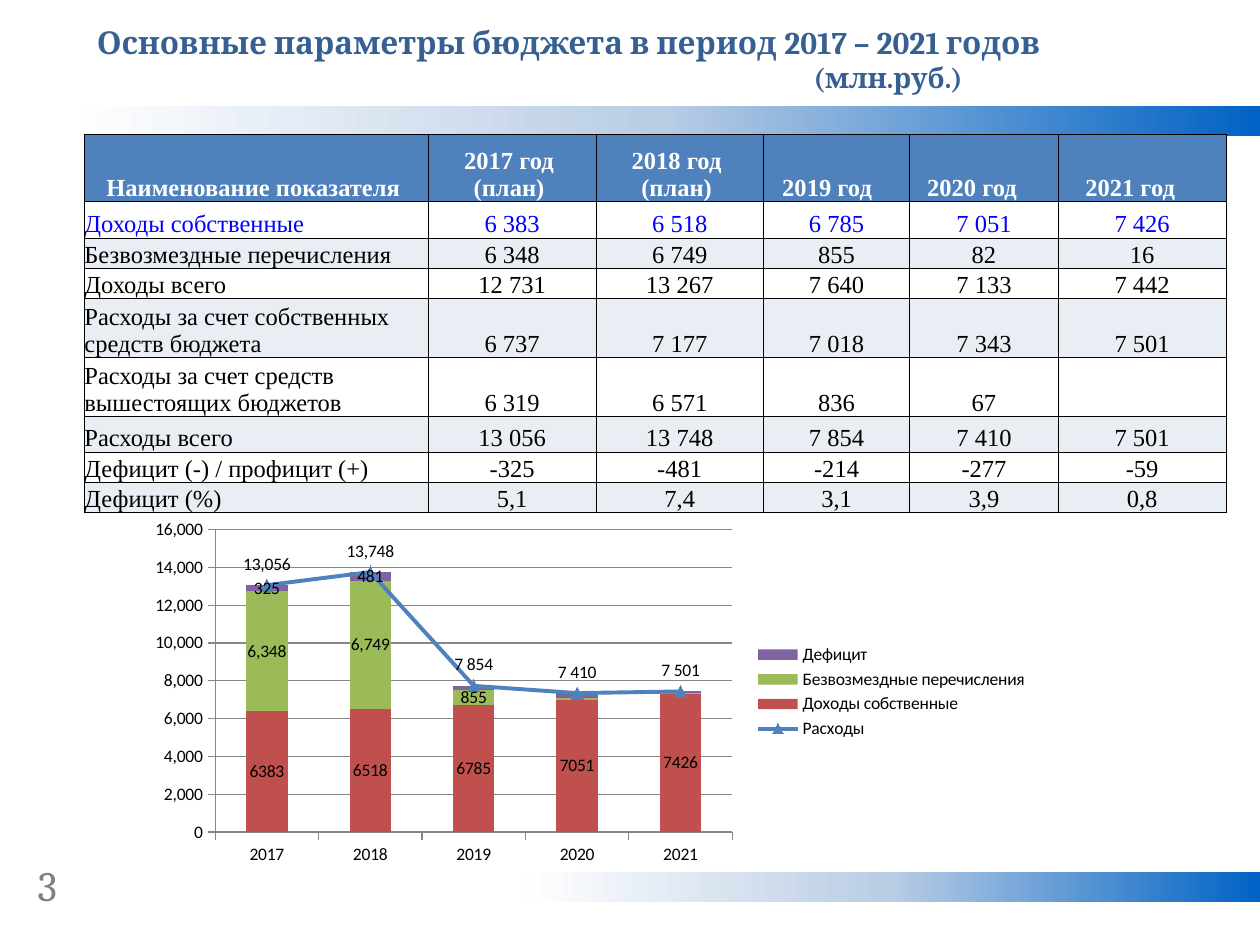
from copy import deepcopy

from pptx import Presentation
from pptx import util as u
from pptx.chart.data import CategoryChartData
from pptx.dml.color import RGBColor
from pptx.enum import chart as ch, shapes, text
from pptx.oxml import parse_xml
from pptx.oxml.ns import nsdecls, qn

# The slide is a grid of 100 columns by 75 rows; boxes are (col, row, cols, rows).
COLS, ROWS = 100, 75
CELL = u.Inches(0.1)

SERIF, SANS, TABLE_FONT = "Cambria", "Calibri", "Times New Roman"
BLUE, BLACK, WHITE, BAND, GREY = "4F81BD", "000000", "FFFFFF", "E9EDF4", "868686"

COL_WIDTHS = [27.3, 13.3, 13.3, 11.6, 11.8, 13.3]
ROW_HEIGHTS = [5.3, 2.9, 2.4, 2.4, 4.7, 4.7, 2.8, 2.4, 2.4]
HEADER_INSETS = [0.5, 0.5, 0.5, 1.5, 1.9, 1.9]
TABLE = [
    ["Наименование показателя", "2017 год\n(план)", "2018 год\n(план)",
     "2019 год", "2020 год", "2021 год"],
    ["Доходы собственные", "6 383", "6 518", "6 785", "7 051", "7 426"],
    ["Безвозмездные перечисления", "6 348", "6 749", "855", "82", "16"],
    ["Доходы всего", "12 731", "13 267", "7 640", "7 133", "7 442"],
    ["Расходы за счет собственных средств бюджета",
     "6 737", "7 177", "7 018", "7 343", "7 501"],
    ["Расходы за счет средств вышестоящих бюджетов",
     "6 319", "6 571", "836", "67", ""],
    ["Расходы всего", "13 056", "13 748", "7 854", "7 410", "7 501"],
    ["Дефицит (-) / профицит (+)", "-325", "-481", "-214", "-277", "-59"],
    ["Дефицит (%)", "5,1", "7,4", "3,1", "3,9", "0,8"],
]

YEARS = ["2017", "2018", "2019", "2020", "2021"]
# name, colour, values, labels (None shows the value, "" hides it)
SERIES = [
    ("Доходы собственные", "C0504D", [6383, 6518, 6721, 6987, 7361],
     ["6383", "6518", "6785", "7051", "7426"]),
    ("Безвозмездные перечисления", "9BBB59", [6348, 6749, 785, 82, 16],
     [None, None, "855", "", ""]),
    ("Дефицит", "8064A2", [325, 481, 226, 277, 59], [None, None, "", "", ""]),
    ("Расходы", BLUE, [13056, 13748, 7732, 7346, 7436],
     [None, None, "7 854", "7 410", "7 501"]),
]


def grid(*cells):
    return [u.Emu(round(n * CELL)) for n in cells]


def rgb(value):
    return RGBColor.from_string(value)


def style(font, name, size, color, bold=False):
    font.name, font.size, font.bold = name, u.Pt(size), bold
    font.color.rgb = rgb(color)


def gradient_band(slide, box):
    s = slide.shapes.add_shape(shapes.MSO_SHAPE.RECTANGLE, *grid(*box))
    s.shadow.inherit = False
    s.line.fill.background()
    stops = "".join(
        f'<a:gs pos="{pos * 1000}"><a:srgbClr val="{color}"/></a:gs>'
        for pos, color in [(0, "0062C4"), (50, "B9CDE5"), (100, WHITE)])
    fill = parse_xml(f'<a:gradFill {nsdecls("a")}><a:gsLst>{stops}</a:gsLst>'
                     '<a:lin ang="10800000" scaled="0"/></a:gradFill>')
    s.element.spPr.find(qn("a:prstGeom")).addnext(fill)


def text_box(slide, box, lines):
    """Each line is (text, size, colour, bold, indent in columns)."""
    tf = slide.shapes.add_textbox(*grid(*box)).text_frame
    tf.word_wrap = True
    tf.text = "\n".join(line[0] for line in lines)
    for p, (_, size, color, bold, indent) in zip(tf.paragraphs, lines):
        style(p.runs[0].font, SERIF, size, color, bold)
        p._p.get_or_add_pPr().set("marL", str(grid(indent)[0]))


def border(cell):
    tcPr = cell._tc.get_or_add_tcPr()
    for side in "LRTB":
        tcPr.append(parse_xml(
            f'<a:ln{side} {nsdecls("a")} w="6350"><a:solidFill>'
            f'<a:srgbClr val="{BLACK}"/></a:solidFill></a:ln{side}>'))


def budget_table(slide, box):
    tbl = slide.shapes.add_table(len(TABLE), len(COL_WIDTHS), *grid(*box)).table
    for column, width in zip(tbl.columns, grid(*COL_WIDTHS)):
        column.width = width
    for row, height in zip(tbl.rows, grid(*ROW_HEIGHTS)):
        row.height = height
    for i, values in enumerate(TABLE):
        fill = BLUE if i == 0 else WHITE if i % 2 else BAND
        color = {0: WHITE, 1: "0000FF"}.get(i, BLACK)
        for j, value in enumerate(values):
            cell = tbl.cell(i, j)
            border(cell)
            cell.fill.solid()
            cell.fill.fore_color.rgb = rgb(fill)
            cell.vertical_anchor = text.MSO_ANCHOR.BOTTOM
            cell.margin_left = cell.margin_top = cell.margin_bottom = 0
            cell.margin_right = grid(0 if i else HEADER_INSETS[j])[0]
            cell.text_frame.text = value
            for p in cell.text_frame.paragraphs:
                p.alignment = (text.PP_ALIGN.LEFT if i and j == 0
                               else text.PP_ALIGN.CENTER)
                for r in p.runs:
                    style(r.font, TABLE_FONT, 14, color, i == 0)


def last_series_to_line(chart):
    """Moves the last stacked series to a line plot on the same axes."""
    bars = chart.element.find(".//" + qn("c:barChart"))
    ser = bars.findall(qn("c:ser"))[-1]
    line = parse_xml(f'<c:lineChart {nsdecls("c")}><c:grouping val="standard"/>'
                     '<c:varyColors val="0"/><c:marker val="1"/></c:lineChart>')
    for bar_only in ser.findall(qn("c:invertIfNegative")):
        ser.remove(bar_only)
    line.insert(2, ser)
    for axis in bars.findall(qn("c:axId")):
        line.append(deepcopy(axis))
    bars.addnext(line)


def place_plot(chart, **shares):
    area = chart.element.find(".//" + qn("c:plotArea"))
    for old in area.findall(qn("c:layout")):
        area.remove(old)
    parts = "".join(f'<c:{k} val="{v}"/>' for k, v in shares.items())
    area.insert(0, parse_xml(
        f'<c:layout {nsdecls("c")}><c:manualLayout><c:layoutTarget val="inner"/>'
        f'<c:xMode val="edge"/><c:yMode val="edge"/>{parts}'
        '</c:manualLayout></c:layout>'))


def label_series(ser, labels, position):
    dl = ser.data_labels
    dl.show_value, dl.position = True, position
    dl.number_format, dl.number_format_is_linked = "#,##0", False
    style(dl.font, SANS, 10, BLACK)
    holder = ser._element.find(qn("c:dLbls"))
    for i, label in enumerate(labels):
        if label:
            point = ser.points[i].data_label
            point.text_frame.text = label
            style(point.text_frame.paragraphs[0].runs[0].font, SANS, 10, BLACK)
            point.position = position
        elif label == "":
            holder.insert(len(holder.findall(qn("c:dLbl"))), parse_xml(
                f'<c:dLbl {nsdecls("c")}><c:idx val="{i}"/>'
                '<c:delete val="1"/></c:dLbl>'))


def budget_chart(slide, box):
    data = CategoryChartData(number_format="#,##0")
    data.categories = YEARS
    for name, _, values, _ in SERIES:
        data.add_series(name, values)
    chart = slide.shapes.add_chart(
        ch.XL_CHART_TYPE.COLUMN_STACKED, *grid(*box), data).chart
    last_series_to_line(chart)
    place_plot(chart, x=0.09, y=0.05, w=0.57, h=0.84)
    style(chart.font, SANS, 10, BLACK)
    chart.has_title = False
    chart.has_legend = True
    chart.legend.position = ch.XL_LEGEND_POSITION.RIGHT
    chart.legend.include_in_layout = False

    bars = chart.plots[0]
    bars.gap_width, bars.overlap, bars.vary_by_categories = 150, 100, False
    value_axis = chart.value_axis
    value_axis.tick_labels.number_format = "#,##0"
    value_axis.tick_labels.number_format_is_linked = False
    value_axis.has_major_gridlines = True
    for part in (value_axis, chart.category_axis, value_axis.major_gridlines):
        part.format.line.color.rgb = rgb(GREY)
    for axis in (value_axis, chart.category_axis):
        axis.major_tick_mark = ch.XL_TICK_MARK.OUTSIDE

    for ser, (_, color, _, labels) in zip(bars.series, SERIES):
        ser.format.fill.solid()
        ser.format.fill.fore_color.rgb = rgb(color)
        label_series(ser, labels, ch.XL_LABEL_POSITION.CENTER)

    _, color, _, labels = SERIES[-1]
    spending = chart.plots[1].series[0]
    spending.smooth = False
    spending.format.line.width = u.Pt(2.25)
    marker = spending.marker
    marker.style, marker.size = ch.XL_MARKER_STYLE.TRIANGLE, 7
    marker.format.fill.solid()
    marker.format.fill.fore_color.rgb = rgb(color)
    for part in (spending, marker):
        part.format.line.color.rgb = rgb(color)
    label_series(spending, labels, ch.XL_LABEL_POSITION.ABOVE)


def main():
    prs = Presentation()
    prs.slide_width, prs.slide_height = grid(COLS, ROWS)
    slide = prs.slides.add_slide(prs.slide_layouts[6])
    gradient_band(slide, (5.1, 8.4, 94.9, 2.4))
    gradient_band(slide, (41.3, 69.2, 58.7, 2.4))
    text_box(slide, (2, 67.7, 6.3, 5), [("3", 24, "808080", False, 0)])
    budget_table(slide, (6.7, 10.7, 90.6, 29.9))
    text_box(slide, (6.7, 1.3, 90.6, 6.7), [
        ("Основные параметры бюджета в период 2017 – 2021 годов",
         18, "376092", True, 0),
        ("(млн.руб.)", 16, "376092", True, 56.9)])
    budget_chart(slide, (10.6, 40.6, 72, 28.6))
    prs.save("out.pptx")


if __name__ == "__main__":
    main()
